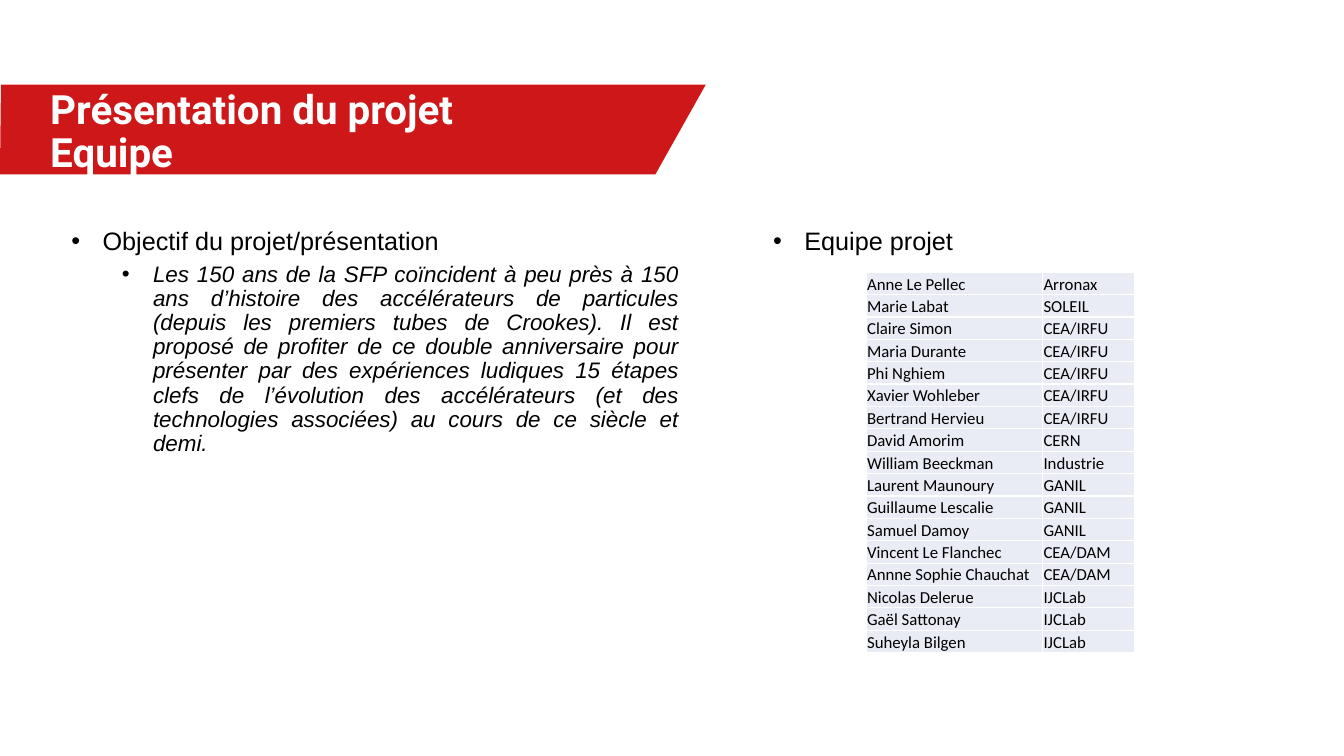
"""Build the project presentation slide with its goal and its team table."""
from lxml import etree
from pptx import Presentation, util as u
from pptx.dml.color import RGBColor
from pptx.enum import text
from pptx.oxml import ns

TITLE = ["Présentation du projet", "Equipe"]
GOAL = [
    ("Objectif du projet/présentation", 18, 0.31, False),
    ("Les 150 ans de la SFP coïncident à peu près à 150 ans d’histoire des "
     "accélérateurs de particules (depuis les premiers tubes de Crookes). Il est "
     "proposé de profiter de ce double anniversaire pour présenter par des "
     "expériences ludiques 15 étapes clefs de l’évolution des accélérateurs (et des "
     "technologies associées) au cours de ce siècle et demi.", 16, 0.81, True),
]
TEAM_HEADING = [("Equipe projet", 18, 0.31, False)]
TEAM = [
    ("Anne Le Pellec", "Arronax"),
    ("Marie Labat", "SOLEIL"),
    ("Claire Simon", "CEA/IRFU"),
    ("Maria Durante", "CEA/IRFU"),
    ("Phi Nghiem", "CEA/IRFU"),
    ("Xavier Wohleber", "CEA/IRFU"),
    ("Bertrand Hervieu", "CEA/IRFU"),
    ("David Amorim", "CERN"),
    ("William Beeckman", "Industrie"),
    ("Laurent Maunoury", "GANIL"),
    ("Guillaume Lescalie", "GANIL"),
    ("Samuel Damoy", "GANIL"),
    ("Vincent Le Flanchec", "CEA/DAM"),
    ("Annne Sophie Chauchat", "CEA/DAM"),
    ("Nicolas Delerue", "IJCLab"),
    ("Gaël Sattonay", "IJCLab"),
    ("Suheyla Bilgen", "IJCLab"),
]
COLUMNS = [1.75, 0.91]
TABLE_HEIGHT = 3.78
BANNER = [(6.5, 1.73), (0, 1.73), (0.01, 0.84), (7, 0.84)]
HANGING = 0.31

RED = RGBColor(0xCD, 0x17, 0x19)
WHITE = RGBColor(0xFF, 0xFF, 0xFF)
BLACK = RGBColor(0, 0, 0)
PALE = RGBColor(0xE9, 0xEB, 0xF5)


def add_run(para, words, font, size, color, bold=False, italic=False):
    span = para.add_run()
    span.text = words
    span.font.name = font
    span.font.size = u.Pt(size)
    span.font.color.rgb = color
    span.font.bold = bold
    span.font.italic = italic


def add_box(page, left, top, width, height, wrap=True):
    box = page.shapes.add_textbox(*map(u.Inches, (left, top, width, height)))
    box.text_frame.word_wrap = wrap
    return box.text_frame


def add_bullets(page, place, items):
    frame = add_box(page, *place)
    for index, (words, size, indent, italic) in enumerate(items):
        para = frame.add_paragraph() if index else frame.paragraphs[0]
        props = para._p.get_or_add_pPr()
        props.set("marL", str(u.Inches(indent)))
        props.set("indent", str(-u.Inches(HANGING)))
        etree.SubElement(props, ns.qn("a:buFont"), typeface="Arial")
        etree.SubElement(props, ns.qn("a:buChar"), char="•")
        para.alignment = text.PP_ALIGN.JUSTIFY
        para.line_spacing = 0.9
        if index:
            para.level = 1
            para.space_before = u.Pt(5)
        add_run(para, words, "Arial", size, BLACK, italic=italic)


def add_banner(page):
    builder = page.shapes.build_freeform(*map(u.Inches, BANNER[0]))
    builder.add_line_segments([(u.Inches(x), u.Inches(y)) for x, y in BANNER[1:]])
    banner = builder.convert_to_shape()
    banner.shadow.inherit = False
    banner.fill.solid()
    banner.fill.fore_color.rgb = RED
    banner.line.fill.background()

    frame = add_box(page, 0.4, 0.84, 6.43, 0.56, wrap=False)
    para = frame.paragraphs[0]
    para.line_spacing = 0.9
    for index, words in enumerate(TITLE):
        if index:
            para.add_line_break()
        add_run(para, words, "Roboto", 28.8, WHITE, bold=True)


def style_cell(cell, words):
    cell.margin_left = cell.margin_right = cell.margin_top = u.Inches(0.01)
    cell.margin_bottom = 0
    cell.vertical_anchor = text.MSO_ANCHOR.BOTTOM
    props = cell._tc.get_or_add_tcPr()
    for side in ("lnL", "lnR", "lnT", "lnB"):
        line = etree.SubElement(props, ns.qn("a:" + side), w=str(u.Pt(1)))
        fill = etree.SubElement(line, ns.qn("a:solidFill"))
        etree.SubElement(fill, ns.qn("a:srgbClr"), val=str(WHITE))
    cell.fill.solid()
    cell.fill.fore_color.rgb = PALE
    add_run(cell.text_frame.paragraphs[0], words, "Calibri", 12, BLACK)


def add_team(page):
    size = (8.59, 2.7, sum(COLUMNS), TABLE_HEIGHT)
    table = page.shapes.add_table(len(TEAM), len(COLUMNS), *map(u.Inches, size)).table
    for column, width in zip(table.columns, COLUMNS):
        column.width = u.Inches(width)
    for row, member in zip(table.rows, TEAM):
        row.height = u.Inches(TABLE_HEIGHT / len(TEAM))
        for cell, words in zip(row.cells, member):
            style_cell(cell, words)


def main():
    deck = Presentation()
    deck.slide_width, deck.slide_height = u.Inches(13.33), u.Inches(7.5)
    page = deck.slides.add_slide(deck.slide_layouts[6])
    add_banner(page)
    add_bullets(page, (0.61, 2.22, 6.22, 3.72), GOAL)
    add_team(page)
    add_bullets(page, (7.57, 2.22, 3.52, 0.56), TEAM_HEADING)
    deck.save("out.pptx")


if __name__ == "__main__":
    main()
